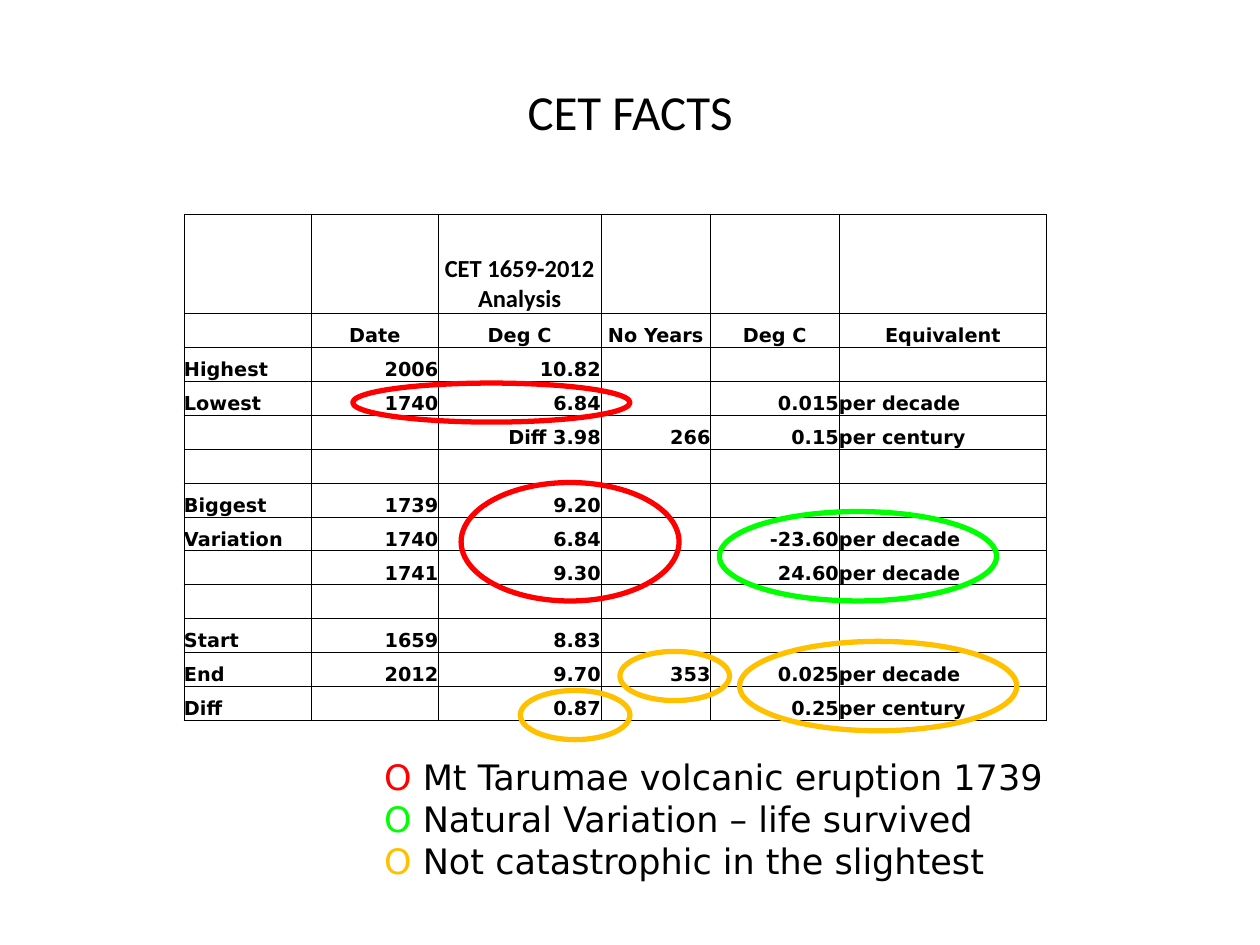
import pptx
import pptx.dml.color
import pptx.enum.shapes
import pptx.enum.text
import pptx.oxml.ns
import pptx.util
from lxml import etree

Inches, Pt = pptx.util.Inches, pptx.util.Pt
ALIGN = pptx.enum.text.PP_ALIGN
ANCHOR = pptx.enum.text.MSO_ANCHOR

# Content
TITLE = "CET FACTS"
ROWS = [
    ("", "", "CET 1659-2012 Analysis", "", "", ""),
    ("", "Date", "Deg C", "No Years", "Deg C", "Equivalent"),
    ("Highest", "2006", "10.82", "", "", ""),
    ("Lowest", "1740", "6.84", "", "0.015", "per decade"),
    ("", "", "Diff 3.98", "266", "0.15", "per century"),
    ("", "", "", "", "", ""),
    ("Biggest", "1739", "9.20", "", "", ""),
    ("Variation", "1740", "6.84", "", "-23.60", "per decade"),
    ("", "1741", "9.30", "", "24.60", "per decade"),
    ("", "", "", "", "", ""),
    ("Start", "1659", "8.83", "", "", ""),
    ("End", "2012", "9.70", "353", "0.025", "per decade"),
    ("Diff", "", "0.87", "", "0.25", "per century"),
]
LEGEND = [
    ("red", "Mt Tarumae volcanic eruption 1739"),
    ("green", "Natural Variation – life survived"),
    ("amber", "Not catastrophic in the slightest"),
]
RINGS = [  # colour, left, top, width, height
    ("red", 2.8, 3.04, 2.2, 0.31),
    ("green", 5.71, 4.06, 2.2, 0.71),
    ("amber", 5.87, 5.09, 2.2, 0.71),
    ("amber", 4.13, 5.48, 0.87, 0.39),
    ("amber", 4.92, 5.17, 0.87, 0.39),
    ("red", 3.66, 3.83, 1.73, 0.94),
]

# Theme and layout
THEME = {
    "colours": {"black": "000000", "red": "FF0000", "green": "00FF00", "amber": "FFC000"},
    "title": {"name": "Calibri", "size": Pt(28), "bold": False},
    "table heading": {"name": "Calibri", "size": Pt(14), "bold": True},
    "table body": {"name": "DejaVu Sans", "size": Pt(11), "bold": True},
    "legend": {"name": "DejaVu Sans", "size": Pt(20), "bold": False},
    "ring width": Pt(3),
    "border width": Pt(0.5),
}
TITLE_BOX = (0.75, 0.21, 8.5, 1.34)
TABLE_BOX = (1.46, 1.7, 6.85, 4.02)
LEGEND_BOX = (2.95, 5.95, 6.06, 1.11)
COLUMN_WIDTHS = (1.01, 1.01, 1.29, 0.87, 1.02, 1.65)
COLUMN_ALIGNS = (ALIGN.LEFT, ALIGN.RIGHT, ALIGN.RIGHT, ALIGN.RIGHT, ALIGN.RIGHT, ALIGN.LEFT)
HEADING_HEIGHT = 0.79
HEADER_ROWS = 2


def colour(name):
    return pptx.dml.color.RGBColor.from_string(THEME["colours"][name])


def box(lengths):
    return [Inches(length) for length in lengths]


def set_all(target, values):
    for name, value in values.items():
        setattr(target, name, value)


def add_text(paragraph, text, style, colour_name="black"):
    run = paragraph.add_run()
    run.text = text
    set_all(run.font, THEME[style])
    run.font.color.rgb = colour(colour_name)


def add_xml(parent, tag, **attributes):
    return etree.SubElement(parent, pptx.oxml.ns.qn(tag), attributes)


def add_borders(cell):
    properties = cell._tc.get_or_add_tcPr()
    for side in ("a:lnL", "a:lnR", "a:lnT", "a:lnB"):
        line = add_xml(properties, side, w=str(THEME["border width"]))
        fill = add_xml(line, "a:solidFill")
        add_xml(fill, "a:srgbClr", val=THEME["colours"]["black"])


def add_title(slide):
    title = slide.shapes.title
    set_all(title, dict(zip(("left", "top", "width", "height"), box(TITLE_BOX))))
    title.text_frame.vertical_anchor = ANCHOR.MIDDLE
    paragraph = title.text_frame.paragraphs[0]
    paragraph.alignment = ALIGN.CENTER
    add_text(paragraph, TITLE, "title")


def add_facts_table(slide):
    table = slide.shapes.add_table(len(ROWS), len(COLUMN_WIDTHS), *box(TABLE_BOX)).table
    set_all(table, {"first_row": False, "horz_banding": False})
    for column, width in zip(table.columns, COLUMN_WIDTHS):
        column.width = Inches(width)
    body_height = (TABLE_BOX[3] - HEADING_HEIGHT) / (len(ROWS) - 1)
    for i, row in enumerate(ROWS):
        table.rows[i].height = Inches(body_height if i else HEADING_HEIGHT)
        style = "table body" if i else "table heading"
        for j, text in enumerate(row):
            cell = table.cell(i, j)
            set_all(cell, {"margin_left": 0, "margin_right": 0, "margin_top": 0,
                           "margin_bottom": 0, "vertical_anchor": ANCHOR.BOTTOM})
            add_borders(cell)
            cell.fill.background()
            paragraph = cell.text_frame.paragraphs[0]
            paragraph.alignment = ALIGN.CENTER if i < HEADER_ROWS else COLUMN_ALIGNS[j]
            if text:
                add_text(paragraph, text, style)
            else:  # keeps empty rows from growing
                size = int(THEME[style]["size"].pt * 100)
                add_xml(paragraph._p, "a:endParaRPr", sz=str(size))


def add_legend(slide):
    frame = slide.shapes.add_textbox(*box(LEGEND_BOX)).text_frame
    frame.word_wrap = True
    frame.auto_size = pptx.enum.text.MSO_AUTO_SIZE.SHAPE_TO_FIT_TEXT
    for i, (colour_name, text) in enumerate(LEGEND):
        paragraph = frame.add_paragraph() if i else frame.paragraphs[0]
        add_text(paragraph, "O ", "legend", colour_name)
        add_text(paragraph, text, "legend")


def add_ring(slide, colour_name, *lengths):
    ring = slide.shapes.add_shape(pptx.enum.shapes.MSO_SHAPE.OVAL, *box(lengths))
    ring.shadow.inherit = False
    ring.fill.background()
    ring.line.color.rgb = colour(colour_name)
    ring.line.width = THEME["ring width"]


def main():
    presentation = pptx.Presentation()
    set_all(presentation, {"slide_width": Inches(10), "slide_height": Inches(7.5)})
    slide = presentation.slides.add_slide(presentation.slide_layouts.get_by_name("Title Only"))
    add_title(slide)
    add_facts_table(slide)
    add_legend(slide)
    for ring in RINGS:
        add_ring(slide, *ring)
    presentation.save("out.pptx")


if __name__ == "__main__":
    main()
